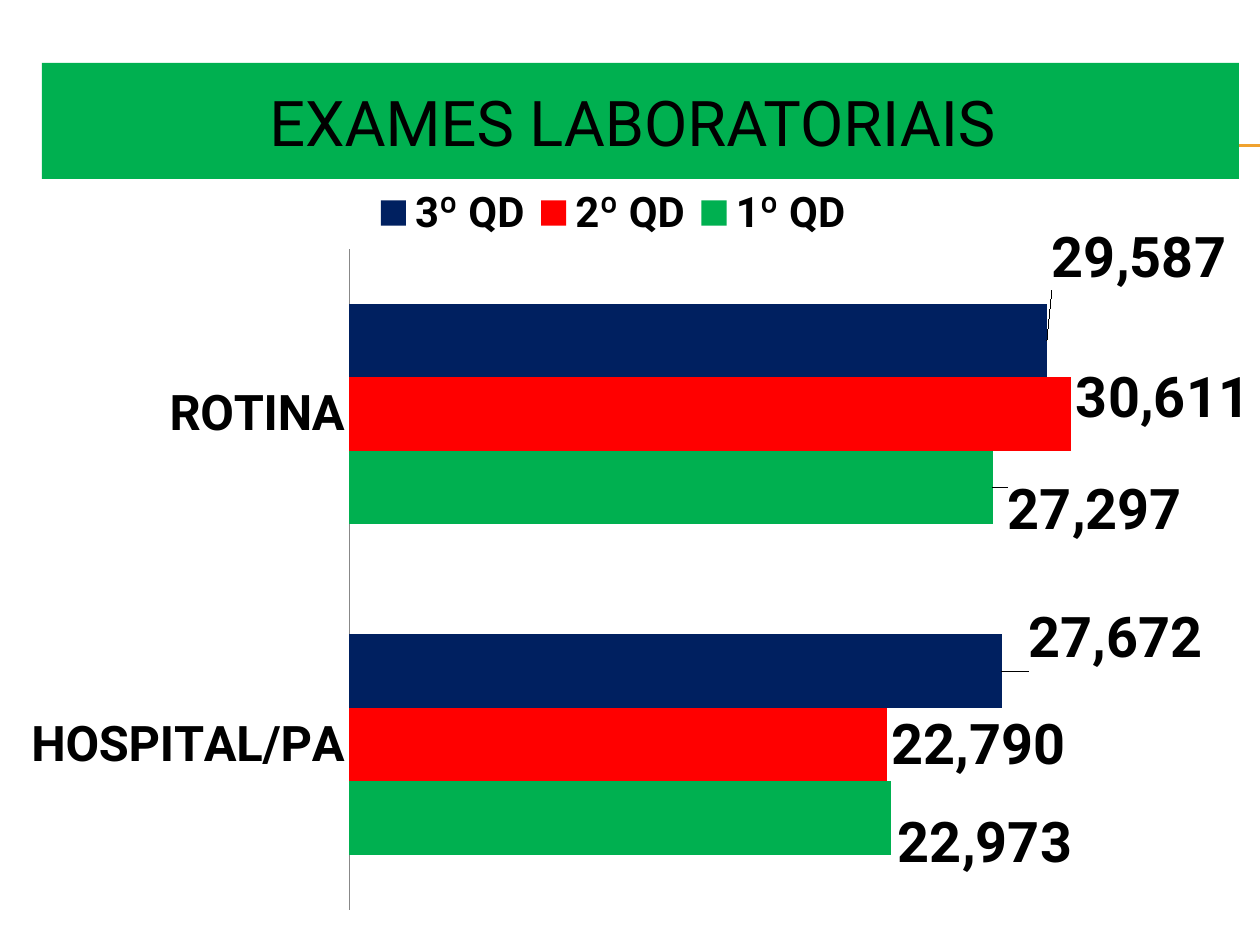
from pptx import Presentation
from pptx.chart.data import CategoryChartData
from pptx.dml.color import RGBColor
from pptx.enum.chart import XL_CHART_TYPE, XL_LABEL_POSITION, XL_LEGEND_POSITION, XL_TICK_MARK
from pptx.enum.shapes import MSO_CONNECTOR, MSO_SHAPE
from pptx.enum.text import MSO_ANCHOR, PP_ALIGN
from pptx.oxml import parse_xml
from pptx.oxml.ns import nsdecls, qn
from pptx.util import Emu, Pt

GREEN = RGBColor(0x00, 0xB0, 0x50)
RED = RGBColor(0xFF, 0x00, 0x00)
NAVY = RGBColor(0x00, 0x20, 0x60)
ORANGE = RGBColor(0xF0, 0xA2, 0x2E)
GRAY = RGBColor(0x88, 0x88, 0x88)
BLACK = RGBColor(0x00, 0x00, 0x00)
FONT = "Roboto"
NUMBER_FORMAT = "#,##0"
CHART_BOX = (20, 158, 1231, 767)

CATEGORIES = ["HOSPITAL/PA", "ROTINA"]
SERIES = [
    ("1º QD", (22973, 27297), GREEN, {0: (2, 25), 1: (10, 22)}),
    ("2º QD", (22790, 30611), RED, {1: (0, -16)}),
    ("3º QD", (27672, 29587), NAVY, {0: (22, -33), 1: (0, -83)}),
]


def px(value):
    return Emu(round(value * 914400 / 126))


def make_layout(x, y, size=None, inner=False):
    width, height = CHART_BOX[2:]
    parts = []
    if inner:
        parts.append(("layoutTarget", "inner"))
    if size:
        parts += [("xMode", "edge"), ("yMode", "edge")]
    parts += [("x", x / width), ("y", y / height)]
    if size:
        parts += [("w", size[0] / width), ("h", size[1] / height)]
    body = "".join(f'<c:{tag} val="{val}"/>' for tag, val in parts)
    return parse_xml(
        f'<c:layout {nsdecls("c")}><c:manualLayout>{body}</c:manualLayout></c:layout>'
    )


def place(parent, index, layout):
    for old in parent.findall(qn("c:layout")):
        parent.remove(old)
    parent.insert(index, layout)


class SlideBuilder:
    def __init__(self, slide):
        self.slide = slide

    def style(self, font, size, bold=False):
        font.name = FONT
        font.size = Pt(size)
        font.bold = bold
        font.color.rgb = BLACK

    def line(self, x1, y1, x2, y2):
        sp = self.slide.shapes.add_connector(
            MSO_CONNECTOR.STRAIGHT, px(x1), px(y1), px(x2), px(y2)
        )
        sp.line.color.rgb = ORANGE
        sp.line.width = Pt(0.75)
        sp._element.spPr.append(parse_xml(f'<a:effectLst {nsdecls("a")}/>'))

    def banner(self, text, *box):
        sp = self.slide.shapes.add_shape(MSO_SHAPE.RECTANGLE, *map(px, box))
        sp.shadow.inherit = False
        sp.fill.solid()
        sp.fill.fore_color.rgb = GREEN
        sp.line.fill.background()
        tf = sp.text_frame
        tf.text = text
        tf.word_wrap = True
        tf.vertical_anchor = MSO_ANCHOR.MIDDLE
        p = tf.paragraphs[0]
        p.alignment = PP_ALIGN.CENTER
        self.style(p.runs[0].font, 36)

    def labels(self, series, offsets):
        labels = series.data_labels
        labels.show_value = True
        labels.number_format = NUMBER_FORMAT
        labels.number_format_is_linked = False
        labels.position = XL_LABEL_POSITION.OUTSIDE_END
        self.style(labels.font, 32, True)
        for index in offsets:
            label = series.points[index].data_label
            label.position = XL_LABEL_POSITION.OUTSIDE_END
            self.style(label.font, 32, True)
        for element in labels._element.findall(qn("c:dLbl")):
            index = int(element.find(qn("c:idx")).get("val"))
            place(element, 1, make_layout(*offsets[index]))

    def bar_chart(self):
        data = CategoryChartData(number_format=NUMBER_FORMAT)
        data.categories = CATEGORIES
        for name, values, _, _ in SERIES:
            data.add_series(name, values)
        chart = self.slide.shapes.add_chart(
            XL_CHART_TYPE.BAR_CLUSTERED, *map(px, CHART_BOX), data
        ).chart
        self.style(chart.font, 10)
        chart.has_title = False
        chart.has_legend = True
        legend = chart.legend
        legend.position = XL_LEGEND_POSITION.TOP
        legend.include_in_layout = False
        self.style(legend.font, 24, True)
        place(legend._element, 1, make_layout(346, 30, (500, 50)))

        axis = chart.category_axis
        axis.major_tick_mark = XL_TICK_MARK.NONE
        axis.format.line.color.rgb = GRAY
        self.style(axis.tick_labels.font, 28, True)
        values = chart.value_axis
        values.minimum_scale = 0
        values.maximum_scale = 35000
        values.has_major_gridlines = False
        values.visible = False

        plot = chart.plots[0]
        plot.gap_width = 150
        plot.overlap = 0
        plot.vary_by_categories = False
        for series, (_, _, color, offsets) in zip(plot.series, SERIES):
            series.format.fill.solid()
            series.format.fill.fore_color.rgb = color
            self.labels(series, offsets)
        area = chart._chartSpace.chart.plotArea
        place(area, 0, make_layout(331, 91, (829, 661), inner=True))


def main():
    prs = Presentation()
    prs.slide_width = px(1260)
    prs.slide_height = px(945)
    s = SlideBuilder(prs.slides.add_slide(prs.slide_layouts[6]))
    for y in (145, 146):
        s.line(71, y, 1260, y)
    s.banner("EXAMES LABORATORIAIS ", 42, 63, 1197, 116)
    s.bar_chart()
    prs.save("out.pptx")


if __name__ == "__main__":
    main()
